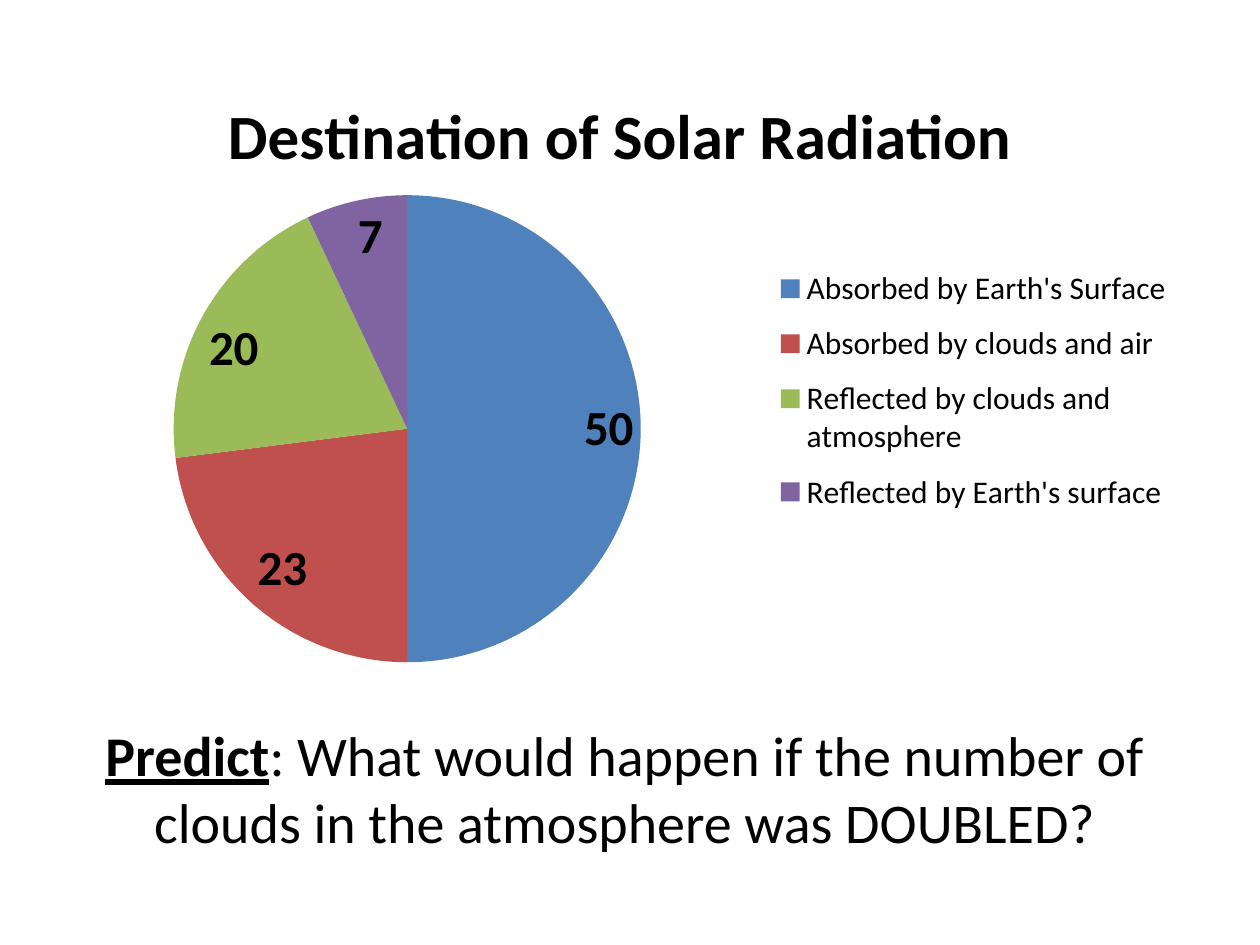
import lxml.etree
import pptx
import pptx.chart.data
import pptx.dml.color
import pptx.enum.chart
import pptx.enum.text
import pptx.oxml.ns
import pptx.util
from pptx.util import Cm, Pt

RGBColor = pptx.dml.color.RGBColor
BLACK = RGBColor(0x00, 0x00, 0x00)
BLUE = RGBColor(0x4F, 0x81, 0xBD)
RED = RGBColor(0xC0, 0x50, 0x4D)
GREEN = RGBColor(0x9B, 0xBB, 0x59)
PURPLE = RGBColor(0x80, 0x64, 0xA2)
FONT = "Calibri"

DESTINATIONS = [
    ("Absorbed by Earth's Surface", 50, BLUE),
    ("Absorbed by clouds and air", 23, RED),
    ("Reflected by clouds and atmosphere", 20, GREEN),
    ("Reflected by Earth's surface", 7, PURPLE),
]


def format_font(font, **values):
    font.color.rgb = BLACK
    for name, value in {"name": FONT, **values}.items():
        setattr(font, name, value)


def set_layout(part, index, **fractions):
    """Place a chart part by fractions of the chart; index is the layout's place in the part."""
    qn = pptx.oxml.ns.qn
    for old in part.findall(qn("c:layout")):
        part.remove(old)
    layout = lxml.etree.Element(qn("c:layout"))
    manual = lxml.etree.SubElement(layout, qn("c:manualLayout"))
    values = {"xMode": "edge", "yMode": "edge", **fractions}
    if part.tag == qn("c:plotArea"):
        values = {"layoutTarget": "inner", **values}
    for name, value in values.items():
        lxml.etree.SubElement(manual, qn(f"c:{name}")).set("val", str(value))
    part.insert(index, layout)


def add_radiation_chart(page, left, top, width, height):
    data = pptx.chart.data.CategoryChartData()
    data.categories = [name for name, _, _ in DESTINATIONS]
    data.add_series("Series 1", [share for _, share, _ in DESTINATIONS])
    chart = page.shapes.add_chart(
        pptx.enum.chart.XL_CHART_TYPE.PIE, left, top, width, height, data
    ).chart
    format_font(chart.font, size=Pt(18))

    chart.has_title = True
    para = chart.chart_title.text_frame.paragraphs[0]
    span = para.add_run()
    span.text = "Destination of Solar Radiation"
    format_font(span.font, size=Pt(36), bold=True)
    chart.chart_title.include_in_layout = False

    chart.has_legend = True
    chart.legend.position = pptx.enum.chart.XL_LEGEND_POSITION.RIGHT
    chart.legend.include_in_layout = False

    plot = chart.plots[0]
    plot.vary_by_categories = True
    plot.has_data_labels = True
    labels = plot.data_labels
    label_format = {
        "show_value": True,
        "show_percentage": False,
        "position": pptx.enum.chart.XL_LABEL_POSITION.INSIDE_END,
    }
    for name, value in label_format.items():
        setattr(labels, name, value)
    format_font(labels.font, size=Pt(28), bold=True)

    for index, (_, _, color) in enumerate(DESTINATIONS):
        fill = plot.series[0].points[index].format.fill
        fill.solid()
        fill.fore_color.rgb = color

    root = chart.element.chart
    set_layout(root.find(pptx.oxml.ns.qn("c:title")), 1, x=0.16, y=0.06)
    set_layout(root.plotArea, 0, x=0.12, y=0.24, w=0.41, h=0.73)
    set_layout(root.find(pptx.oxml.ns.qn("c:legend")), 1, x=0.64, y=0.33, w=0.35, h=0.43)


def add_question(page, left, top, width, height):
    box = page.shapes.add_textbox(left, top, width, height)
    frame = box.text_frame
    frame.word_wrap = True
    frame.auto_size = pptx.enum.text.MSO_AUTO_SIZE.SHAPE_TO_FIT_TEXT
    para = frame.paragraphs[0]
    para.alignment = pptx.enum.text.PP_ALIGN.CENTER
    question = ": What would happen if the number of clouds in the atmosphere was DOUBLED?"
    for text, strong in [("Predict", True), (question, False)]:
        span = para.add_run()
        span.text = text
        format_font(span.font, size=Pt(32), bold=strong, underline=strong)


def main():
    deck = pptx.Presentation()
    deck.slide_width, deck.slide_height = Cm(25.4), Cm(19.05)
    page = deck.slides.add_slide(deck.slide_layouts[6])
    add_radiation_chart(page, Cm(0.64), Cm(0.84), Cm(23.29), Cm(12.9))
    add_question(page, Cm(1.27), Cm(14.4), Cm(22.66), Cm(3))
    deck.save("out.pptx")


if __name__ == "__main__":
    main()
